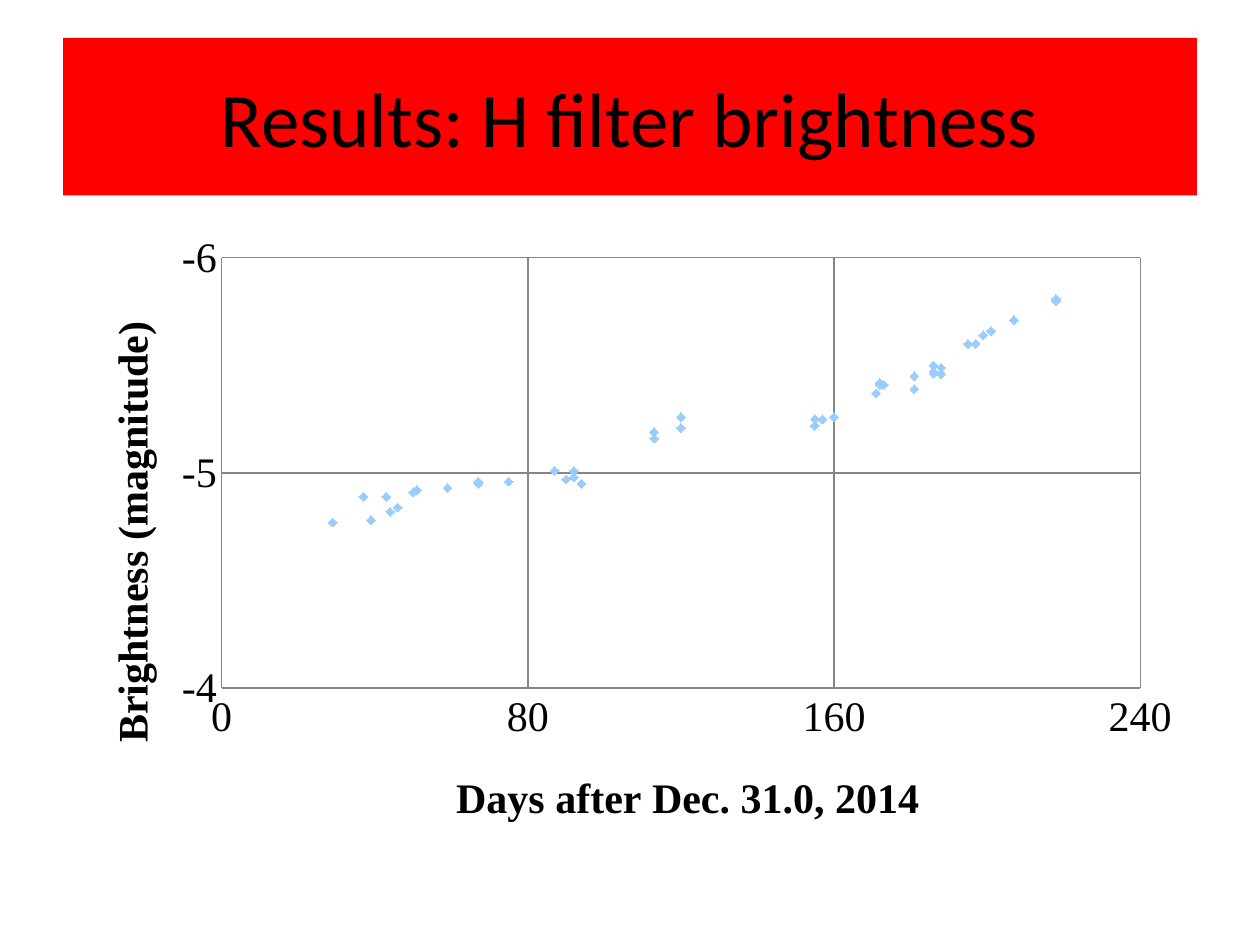
from lxml.etree import SubElement, Element
from pptx import Presentation
from pptx.chart.data import XyChartData
from pptx.dml.color import RGBColor
from pptx.enum.chart import XL_AXIS_CROSSES, XL_CHART_TYPE, XL_MARKER_STYLE, XL_TICK_MARK
from pptx.enum.text import MSO_ANCHOR, PP_ALIGN
from pptx.oxml.ns import qn
from pptx.util import Inches, Pt

COLORS = {"banner": "FF0000", "text": "000000", "grid": "868686", "marker": "99CCFF"}
AXIS_FONT = "Times New Roman"
DAYS = [29, 37, 39, 43, 44, 46, 50, 51, 59, 67, 67, 75, 87, 90, 92,
        92, 94, 94, 113, 113, 120, 120, 155, 155, 157, 160, 171, 172, 172, 173,
        181, 181, 186, 186, 186, 188, 188, 195, 197, 197, 199, 201, 207, 218, 218]
MAGNITUDES = [-4.77, -4.89, -4.78, -4.89, -4.82, -4.84, -4.91, -4.92, -4.93,
              -4.95, -4.96, -4.96, -5.01, -4.97, -5.01, -4.98, -4.95, -4.95,
              -5.16, -5.19, -5.21, -5.26, -5.22, -5.25, -5.25, -5.26, -5.37,
              -5.41, -5.42, -5.41, -5.45, -5.39, -5.5, -5.46, -5.47, -5.46,
              -5.49, -5.6, -5.6, -5.6, -5.64, -5.66, -5.71, -5.81, -5.8]


def rgb(name):
    return RGBColor.from_string(COLORS[name])


def set_font(font, name, size, bold=False):
    font.name, font.size, font.bold = name, Pt(size), bold
    font.color.rgb = rgb("text")


def place(element, index, **shares):
    """Give a chart part a manual layout, in shares of the chart's size."""
    for old in element.findall(qn("c:layout")):
        element.remove(old)
    layout = Element(qn("c:layout"))
    manual = SubElement(layout, qn("c:manualLayout"))
    if "w" in shares:
        SubElement(manual, qn("c:layoutTarget"), val="inner")
    for side in "xy":
        SubElement(manual, qn(f"c:{side}Mode"), val="edge")
    for side, share in shares.items():
        SubElement(manual, qn(f"c:{side}"), val=str(share))
    element.insert(index, layout)


def format_axis(axis, title, low, high, step, x, y):
    axis.minimum_scale, axis.maximum_scale, axis.major_unit = low, high, step
    axis.major_tick_mark = axis.minor_tick_mark = XL_TICK_MARK.NONE
    axis.has_major_gridlines = True
    for line in (axis.format.line, axis.major_gridlines.format.line):
        line.color.rgb = rgb("grid")
        line.width = Pt(0.75)
    set_font(axis.tick_labels.font, AXIS_FONT, 24)
    axis.tick_labels.number_format = "0"
    axis.tick_labels.number_format_is_linked = False
    tf = axis.axis_title.text_frame
    tf.text = title
    set_font(tf.paragraphs[0].font, AXIS_FONT, 24, bold=True)
    place(axis.axis_title._element, 1, x=x, y=y)


def add_banner(s, text):
    title = s.shapes.title
    title.left, title.top, title.width, title.height = map(Inches, (0.5, 0.3, 9, 1.25))
    title.fill.solid()
    title.fill.fore_color.rgb = rgb("banner")
    tf = title.text_frame
    tf.text = text
    tf.vertical_anchor = MSO_ANCHOR.MIDDLE
    p = tf.paragraphs[0]
    p.alignment = PP_ALIGN.CENTER
    set_font(p.font, "Calibri", 44)


def add_brightness_chart(s):
    data = XyChartData()
    series = data.add_series("Series 1")
    for day, magnitude in zip(DAYS, MAGNITUDES):
        series.add_data_point(day, magnitude)
    chart = s.shapes.add_chart(XL_CHART_TYPE.XY_SCATTER, Inches(0.5), Inches(1.75),
                               Inches(9), Inches(4.95), data).chart
    set_font(chart.font, "Calibri", 10)
    chart.has_legend = chart.has_title = False
    plot = chart.plots[0]
    plot.vary_by_categories = False
    points = plot.series[0]
    points.smooth = False
    points.format.line.fill.background()
    points.marker.style = XL_MARKER_STYLE.DIAMOND
    points.marker.size = 5
    points.marker.format.fill.solid()
    points.marker.format.fill.fore_color.rgb = rgb("marker")
    points.marker.format.line.color.rgb = rgb("marker")

    format_axis(chart.category_axis, "Days after Dec. 31.0, 2014", 0, 240, 80, 0.34, 0.87)
    brightness = chart.value_axis
    format_axis(brightness, "Brightness (magnitude)", -6, -4, 1, 0.03, 0.15)
    brightness.reverse_order = True
    brightness.crosses = XL_AXIS_CROSSES.MAXIMUM
    body = brightness.axis_title._element.find(".//" + qn("a:bodyPr"))
    body.set("rot", "-5400000")
    body.set("vert", "horz")
    place(chart._chartSpace.find(".//" + qn("c:plotArea")), 0, x=0.14, y=0.06, w=0.81, h=0.69)


def main():
    prs = Presentation()
    prs.slide_width, prs.slide_height = Inches(10), Inches(7.5)
    s = prs.slides.add_slide(prs.slide_layouts[5])
    add_banner(s, "Results: H filter brightness")
    add_brightness_chart(s)
    prs.save("out.pptx")


if __name__ == "__main__":
    main()
